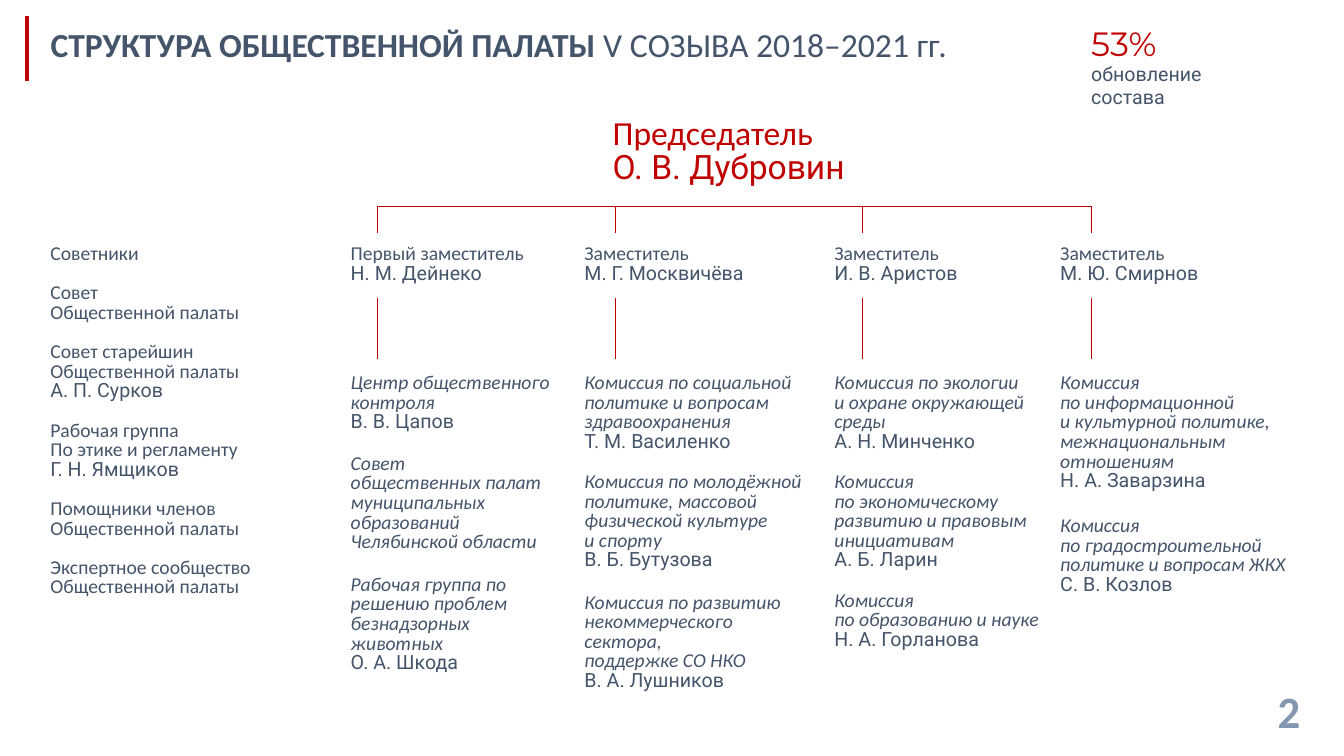
"""Build the slide with the structure of the Public Chamber."""
from lxml import etree
from pptx import Presentation
from pptx.dml.color import RGBColor
from pptx.enum.shapes import MSO_CONNECTOR
from pptx.enum.text import MSO_ANCHOR, MSO_AUTO_SIZE, PP_ALIGN
from pptx.oxml.ns import qn
from pptx.util import Cm, Pt

RED = RGBColor(0xC0, 0x00, 0x00)
SLATE = RGBColor(0x44, 0x54, 0x6A)
PALE_BLUE = RGBColor(0x84, 0x97, 0xB0)
STRAIGHT = MSO_CONNECTOR.STRAIGHT
TOP = MSO_ANCHOR.TOP
LEFT = PP_ALIGN.LEFT
NO_AUTOSIZE = MSO_AUTO_SIZE.NONE

ROLE = {"name": "Calibri", "size": Pt(14), "color": SLATE}
PERSON = {**ROLE, "name": "Roboto"}
BODY = {**ROLE, "italic": True}
TITLE = {**ROLE, "size": Pt(24), "bold": False}
TITLE_BOLD = {**TITLE, "bold": True}
CHAIR_ROLE = {"name": "Calibri", "size": Pt(24), "color": RED}
CHAIR_NAME = {**CHAIR_ROLE, "name": "Roboto"}
SHARE = {**CHAIR_ROLE, "name": "Montserrat"}
PAGE_NUMBER = {"name": "Calibri", "size": Pt(32), "color": PALE_BLUE, "bold": True}

deck = Presentation()
deck.slide_width, deck.slide_height = Cm(33.87), Cm(19.05)
page = deck.slides.add_slide(deck.slide_layouts[5])


def fill_box(box, left, top, width, height, paragraphs, leading=None):
    """Place a box and write its paragraphs, each a list of (text, format) spans."""
    box.left, box.top, box.width, box.height = Cm(left), Cm(top), Cm(width), Cm(height)
    frame = box.text_frame
    frame.word_wrap = True
    frame.auto_size = NO_AUTOSIZE
    frame.vertical_anchor = TOP
    for index, spans in enumerate(paragraphs):
        para = frame.add_paragraph() if index else frame.paragraphs[0]
        para.alignment = LEFT
        if leading:
            para.line_spacing = Pt(leading)
        for text, style in spans:
            span = para.add_run()
            span.text = text
            for key, value in style.items():
                if key == "color":
                    span.font.color.rgb = value
                else:
                    setattr(span.font, key, value)
    return frame


def add_line(x1, y1, x2, y2, weight=0.5):
    """Draw a straight red line without a shadow."""
    line = page.shapes.add_connector(STRAIGHT, Cm(x1), Cm(y1), Cm(x2), Cm(y2))
    line.line.color.rgb = RED
    line.line.width = Pt(weight)
    etree.SubElement(line._element.spPr, qn("a:effectLst"))


fill_box(page.shapes.title, 1.02, 0.48, 27.03, 1.27,
         [[("СТРУКТУРА ОБЩЕСТВЕННОЙ ПАЛАТЫ ", TITLE_BOLD), ("V СОЗЫВА 2018–2021 гг.", TITLE)]])
add_line(0.69, 0.41, 0.69, 2.03, 3)

number_box = page.shapes.add_textbox(0, 0, 0, 0)
number_frame = fill_box(number_box, 32.2, 17.17, 1.24, 1.42, [[("2", PAGE_NUMBER)]])
for side, inset in {"left": 0, "top": 0.05, "right": 0, "bottom": 0}.items():
    setattr(number_frame, f"margin_{side}", Cm(inset))

fill_box(page.shapes.add_textbox(0, 0, 0, 0), 15.19, 2.87, 6.68, 1.95,
         [[("Председатель", CHAIR_ROLE)], [("О. В. Дубровин", CHAIR_NAME)]], 24)
fill_box(page.shapes.add_textbox(0, 0, 0, 0), 27.25, 0.91, 3.53, 1.95,
         [[("53%", SHARE)], [("обновление", PERSON)], [("состава", PERSON)]], 16)

advisers = [
    [("Советники", ROLE)],
    [("Совет", ROLE), ("Общественной палаты", ROLE)],
    [("Совет старейшин", ROLE), ("Общественной палаты", ROLE), ("А. П. Сурков", PERSON)],
    [("Рабочая группа", ROLE), ("По этике и регламенту", ROLE), ("Г. Н. Ямщиков", PERSON)],
    [("Помощники членов", ROLE), ("Общественной палаты", ROLE)],
    [("Экспертное сообщество", ROLE), ("Общественной палаты", ROLE)],
]
adviser_frame = fill_box(page.shapes.add_textbox(0, 0, 0, 0), 1.02, 6.05, 5.59, 9.25,
                         [[line] for group in advisers for line in group], 14)
first_line = 0
for group in advisers[:-1]:
    first_line += len(group)
    adviser_frame.paragraphs[first_line].space_before = Pt(14)

# Each branch: text left, stem, deputy role, deputy name, deputy width, units.
# Each unit: top, width, height, lines of its title, head.
branches = [
    (8.59, 9.5, "Первый заместитель", "Н. М. Дейнеко", 5.38, [
        (9.3, 5.56, 1.75, ["Центр общественного", "контроля"], "В. В. Цапов"),
        (11.33, 5.77, 2.74, [
            "Совет", "общественных палат муниципальных образований Челябинской области"], None),
        (14.38, 5.56, 2.74, [
            "Рабочая группа по решению проблем безнадзорных животных"], "О. А. Шкода"),
    ]),
    (14.48, 15.52, "Заместитель", "М. Г. Москвичёва", 5.38, [
        (9.3, 5.99, 2.26, [
            "Комиссия по социальной политике и вопросам здравоохранения"], "Т. М. Василенко"),
        (11.79, 5.99, 2.74, [
            "Комиссия по молодёжной политике, массовой", "физической культуре", "и спорту"],
         "В. Б. Бутузова"),
        (14.83, 6.3, 2.26, [
            "Комиссия по развитию некоммерческого сектора,", "поддержке СО НКО"],
         "В. А. Лушников"),
    ]),
    (20.78, 21.72, "Заместитель", "И. В. Аристов", 4.09, [
        (9.3, 5.99, 2.26, ["Комиссия по экологии", "и охране окружающей", "среды"],
         "А. Н. Минченко"),
        (11.79, 6.73, 2.74, [
            "Комиссия", "по экономическому", "развитию и правовым", "инициативам"],
         "А. Б. Ларин"),
        (14.78, 6.73, 1.75, ["Комиссия", "по образованию и науке"], "Н. А. Горланова"),
    ]),
    (26.47, 27.51, "Заместитель", "М. Ю. Смирнов", 4.29, [
        (9.3, 5.99, 3.25, [
            "Комиссия", "по информационной", "и культурной политике,",
            "межнациональным", "отношениям"], "Н. А. Заварзина"),
        (12.9, 6.73, 2.26, ["Комиссия", "по градостроительной", "политике и вопросам ЖКХ"],
         "С. В. Козлов"),
    ]),
]
add_line(branches[0][1], 5.21, branches[-1][1], 5.21)
for left, stem, role, deputy, deputy_width, units in branches:
    add_line(stem, 5.21, stem, 5.87)
    add_line(stem, 7.52, stem, 9.04)
    fill_box(page.shapes.add_textbox(0, 0, 0, 0), left, 6.05, deputy_width, 1.24,
             [[(role, ROLE)], [(deputy, PERSON)]], 14)
    for top, width, height, lines, head in units:
        paragraphs = [[(line, BODY)] for line in lines]
        if head:
            paragraphs.append([(head, PERSON)])
        fill_box(page.shapes.add_textbox(0, 0, 0, 0), left, top, width, height, paragraphs, 14)

deck.save("out.pptx")
